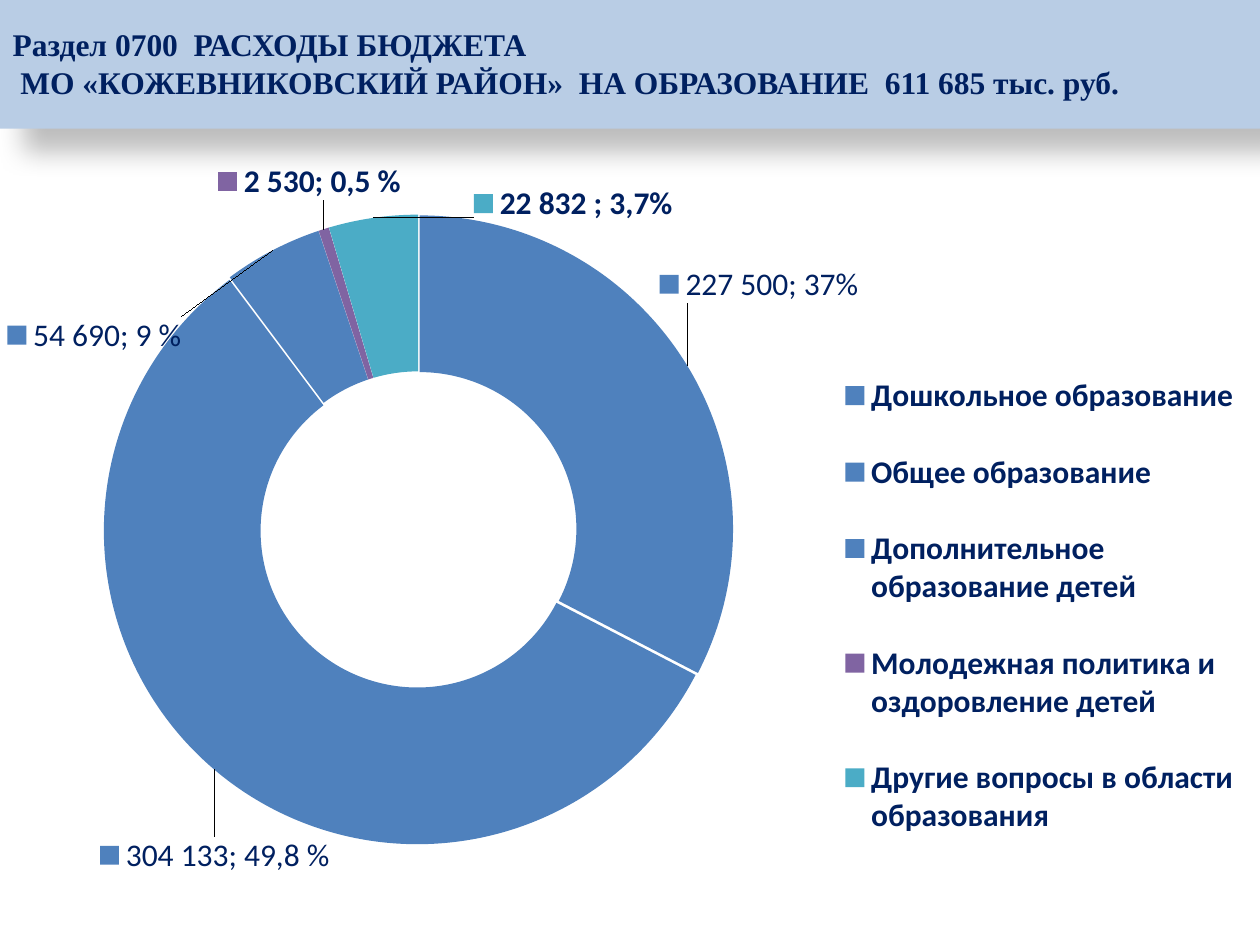
from lxml import etree
from pptx import Presentation
from pptx.chart.data import CategoryChartData
from pptx.dml.color import RGBColor
from pptx.enum import chart as charts, text
from pptx.oxml import parse_xml
from pptx.oxml.ns import nsdecls, qn
from pptx.util import Pt

NAVY = RGBColor(0x00, 0x20, 0x60)
PALE_BLUE = RGBColor(0xB9, 0xCD, 0xE5)
BLUE = RGBColor(0x4F, 0x81, 0xBD)
PURPLE = RGBColor(0x80, 0x64, 0xA2)
TEAL = RGBColor(0x4B, 0xAC, 0xC6)

# category, value, colour, label, label is bold, label shift (x, y)
SECTORS = [
    ("Дошкольное образование", 154674, BLUE, "227 500; 37%", False, (0.11, -0.16)),
    ("Общее образование", 271155, BLUE, "304 133; 49,8 %", False, (-0.04, 0.19)),
    ("Дополнительное образование детей", 24225, BLUE, "54 690; 9 %", False, (-0.17, 0.02)),
    ("Молодежная политика и оздоровление детей", 2530, PURPLE, "2 530; 0,5 %", True, (-0.03, -0.16)),
    ("Другие вопросы в области образования", 21754, TEAL, "22 832 ; 3,7%", True, (0.15, -0.12)),
]


def manual_layout(modes, **sizes):
    """Return a c:layout element; modes are name/value pairs, sizes are chart fractions."""
    layout = parse_xml(f"<c:layout {nsdecls('c')}><c:manualLayout/></c:layout>")
    for name, value in [*modes.items(), *sizes.items()]:
        etree.SubElement(layout[0], qn(f"c:{name}")).set("val", str(value))
    return layout


def style_font(font, size, bold):
    font.size = Pt(size)
    font.bold = bold
    font.color.rgb = NAVY


deck = Presentation()
deck.slide_width, deck.slide_height = Pt(720), Pt(540)
page = deck.slides.add_slide(deck.slide_layouts[5])

# Title band
title = page.shapes.title
title.left, title.top, title.width, title.height = Pt(0), Pt(-2), Pt(720), Pt(75.5)
title.fill.solid()
title.fill.fore_color.rgb = PALE_BLUE
title.shadow.inherit = False
effects = title._element.spPr.find(qn("a:effectLst"))
effects.append(parse_xml(
    f'<a:outerShdw {nsdecls("a")} blurRad="{Pt(15)}" dist="{Pt(18)}" dir="2700000" '
    'algn="tl" rotWithShape="0"><a:srgbClr val="000000"><a:alpha val="26000"/>'
    '</a:srgbClr></a:outerShdw>'))
frame = title.text_frame
frame.text = ("Раздел 0700  РАСХОДЫ БЮДЖЕТА\v"
              " МО «КОЖЕВНИКОВСКИЙ РАЙОН»  НА ОБРАЗОВАНИЕ  611 685 тыс. руб.")
frame.word_wrap = True
frame.auto_size = text.MSO_AUTO_SIZE.NONE
frame.vertical_anchor = text.MSO_ANCHOR.MIDDLE
frame.paragraphs[0].alignment = text.PP_ALIGN.LEFT
for span in frame.paragraphs[0].runs:
    style_font(span.font, 18, True)
    span.font.name = "Times New Roman"

# Doughnut chart
data = CategoryChartData(number_format="#,##0")
data.categories = [sector[0] for sector in SECTORS]
data.add_series("Series 1", [sector[1] for sector in SECTORS])
chart = page.shapes.add_chart(charts.XL_CHART_TYPE.DOUGHNUT, Pt(0), Pt(84),
                              Pt(720), Pt(437), data).chart
chart.font.name = "Calibri"
chart.font.size = Pt(10)
chart.has_title = False
chart.plots[0].vary_by_categories = True
plot_area = chart._chartSpace.chart.plotArea
for layout in plot_area.findall(qn("c:layout")):
    plot_area.remove(layout)
plot_area.insert(0, manual_layout(
    {"layoutTarget": "inner", "xMode": "edge", "yMode": "edge"},
    x=0.082, y=0.088, w=0.5, h=0.825))

chart.has_legend = True
legend = chart.legend
legend.position = charts.XL_LEGEND_POSITION.RIGHT
legend.include_in_layout = False
style_font(legend.font, 18, True)
for layout in legend._element.findall(qn("c:layout")):
    legend._element.remove(layout)
legend._element.find(qn("c:legendPos")).addnext(manual_layout(
    {"xMode": "edge", "yMode": "edge"}, x=0.66, y=0.25, w=0.33, h=0.7))

series = chart.plots[0].series[0]
labels = series.data_labels
labels.number_format = "#,##0.000"
labels.number_format_is_linked = False
labels.show_value = labels.show_percentage = labels.show_legend_key = True
style_font(labels.font, 18, True)

for index, (_, _, colour, wording, bold, (x, y)) in enumerate(SECTORS):
    point = series.points[index]
    point.format.fill.solid()
    point.format.fill.fore_color.rgb = colour
    label_frame = point.data_label.text_frame
    label_frame.text = wording
    style_font(label_frame.paragraphs[0].runs[0].font, 18, bold)
    label = series._element.xpath(f"c:dLbls/c:dLbl[c:idx/@val='{index}']")[0]
    label.find(qn("c:idx")).addnext(manual_layout({}, x=x, y=y))
    for flag in ("c:showLegendKey", "c:showPercent"):
        label.find(qn(flag)).set("val", "1")

series._element.find(qn("c:dPt")).addprevious(
    parse_xml(f'<c:explosion {nsdecls("c")} val="1"/>'))

deck.save("out.pptx")
